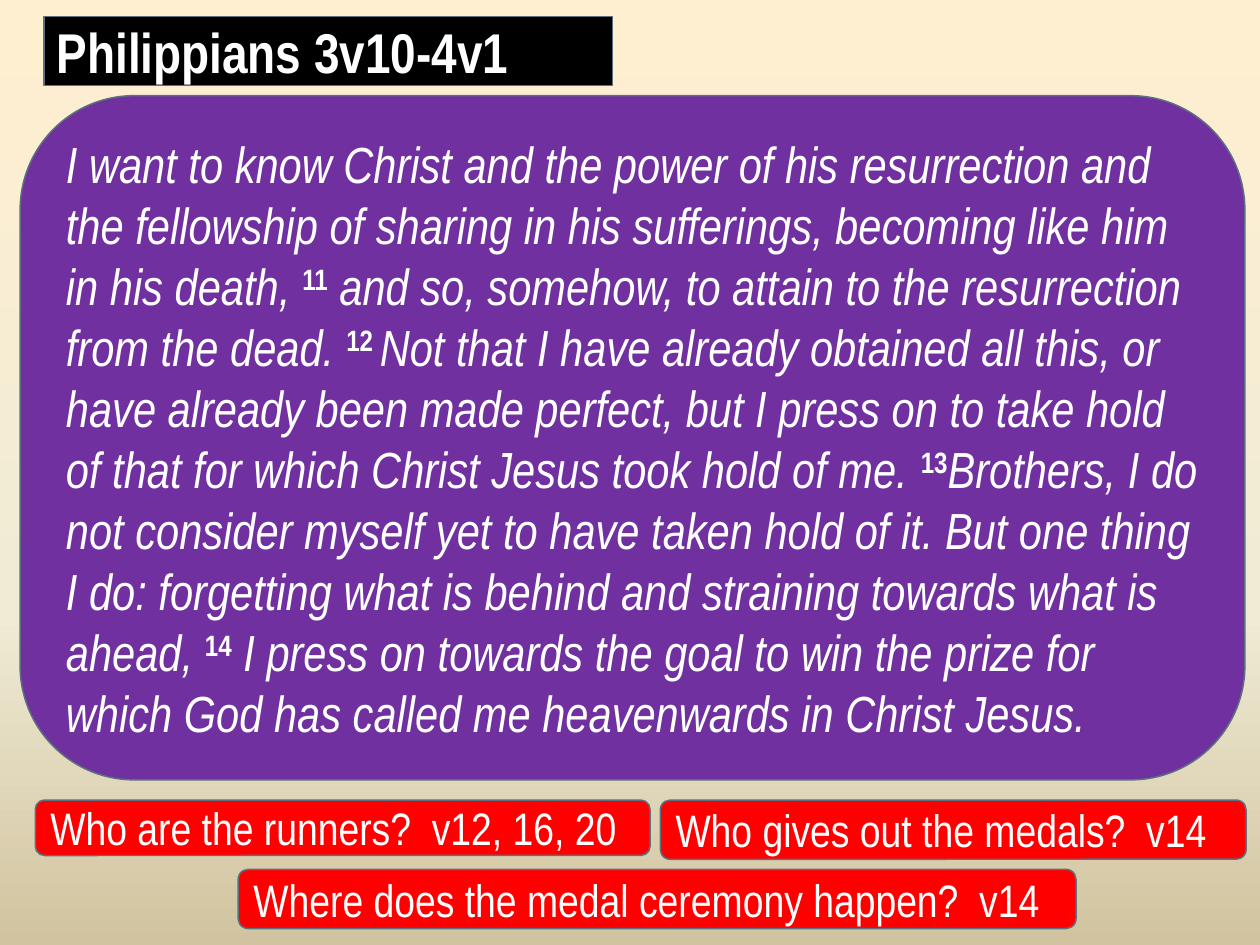
from copy import deepcopy

from lxml import etree
from pptx import Presentation, util as u
from pptx.dml.color import RGBColor
from pptx.enum import shapes, text
from pptx.oxml.ns import qn

# Content
HEADING = "Philippians 3v10-4v1"
PASSAGE = [  # (verse number, words)
    ("", "I want to know Christ and the power of his resurrection and the "
         "fellowship of sharing in his sufferings, becoming like him in his death, "),
    ("11", " and so, somehow, to attain to the resurrection from the dead. "),
    ("12 ", "Not that I have already obtained all this, or have already been made "
            "perfect, but I press on to take hold of that for which Christ Jesus "
            "took hold of me. "),
    ("13", "Brothers, I do not consider myself yet to have taken hold of it. But "
           "one thing I do: forgetting what is behind and straining towards what "
           "is ahead, "),
    ("14", " I press on towards the goal to win the prize for which God has called "
           "me heavenwards in Christ Jesus."),
]
QUESTIONS = [  # (words, box)
    ("Who are the runners?  v12, 16, 20", (0.28, 6.35, 4.88, 0.44)),
    ("Who gives out the medals?  v14", (5.24, 6.35, 4.65, 0.47)),
    ("Where does the medal ceremony happen?  v14", (1.89, 6.9, 6.65, 0.47)),
]
HEADING_BOX = (0.35, 0.13, 4.51, 0.55)
PASSAGE_BOX = (0.16, 0.76, 9.72, 5.43)
BACKGROUND = [(0, "FFEFD1"), (0.65, "F0EBD5"), (1, "D1C39F")]


def rgb(value):
    return RGBColor.from_string(value)


def style_panel(panel, fill):
    panel.fill.solid()
    panel.fill.fore_color.rgb = rgb(fill)
    panel.line.color.rgb = rgb("5D7080")
    panel.line.width = u.Pt(0.85)
    frame = panel.text_frame
    frame.word_wrap = True
    frame.auto_size = text.MSO_AUTO_SIZE.NONE
    frame.vertical_anchor = text.MSO_ANCHOR.MIDDLE
    paragraph = frame.paragraphs[0]
    paragraph.alignment = text.PP_ALIGN.LEFT
    return paragraph


def add_panel(box, fill):
    panel = slide.shapes.add_shape(
        shapes.MSO_SHAPE.ROUNDED_RECTANGLE, *map(u.Inches, box))
    panel.shadow.inherit = False
    return style_panel(panel, fill)


def add_run(paragraph, words, size, bold=False, italic=False, raised=False):
    run = paragraph.add_run()
    run.text = words
    font = run.font
    font.name, font.size = "Arial Narrow", u.Pt(size)
    font.bold, font.italic = bold, italic
    font.color.rgb = rgb("FFFFFF")
    if raised:
        run._r.get_or_add_rPr().set("baseline", "30000")


deck = Presentation()
deck.slide_width, deck.slide_height = u.Inches(10), u.Inches(7.5)
slide = deck.slides.add_slide(deck.slide_layouts[5])

# Background, shaded from top to bottom
backdrop = slide.background.fill
backdrop.gradient()
backdrop.gradient_angle = 270
stop_list = backdrop.gradient_stops[0]._gs.getparent()
stop_list.append(deepcopy(stop_list[0]))
for stop, (position, color) in zip(backdrop.gradient_stops, BACKGROUND):
    stop.position = position
    stop.color.rgb = rgb(color)

# Heading: the title placeholder with rounded corners
heading = slide.shapes.title
heading.left, heading.top, heading.width, heading.height = map(u.Inches, HEADING_BOX)
outline = etree.SubElement(heading._element.spPr, qn("a:prstGeom"), prst="roundRect")
etree.SubElement(outline, qn("a:avLst"))
add_run(style_panel(heading, "000000"), HEADING, 32, bold=True)

# Passage with raised verse numbers
passage = add_panel(PASSAGE_BOX, "7030A0")
for verse, words in PASSAGE:
    if verse:
        add_run(passage, verse, 29, bold=True, raised=True)
    add_run(passage, words, 29, italic=True)

# Questions
for question, box in QUESTIONS:
    add_run(add_panel(box, "FF0000"), question, 26)

deck.save("out.pptx")
